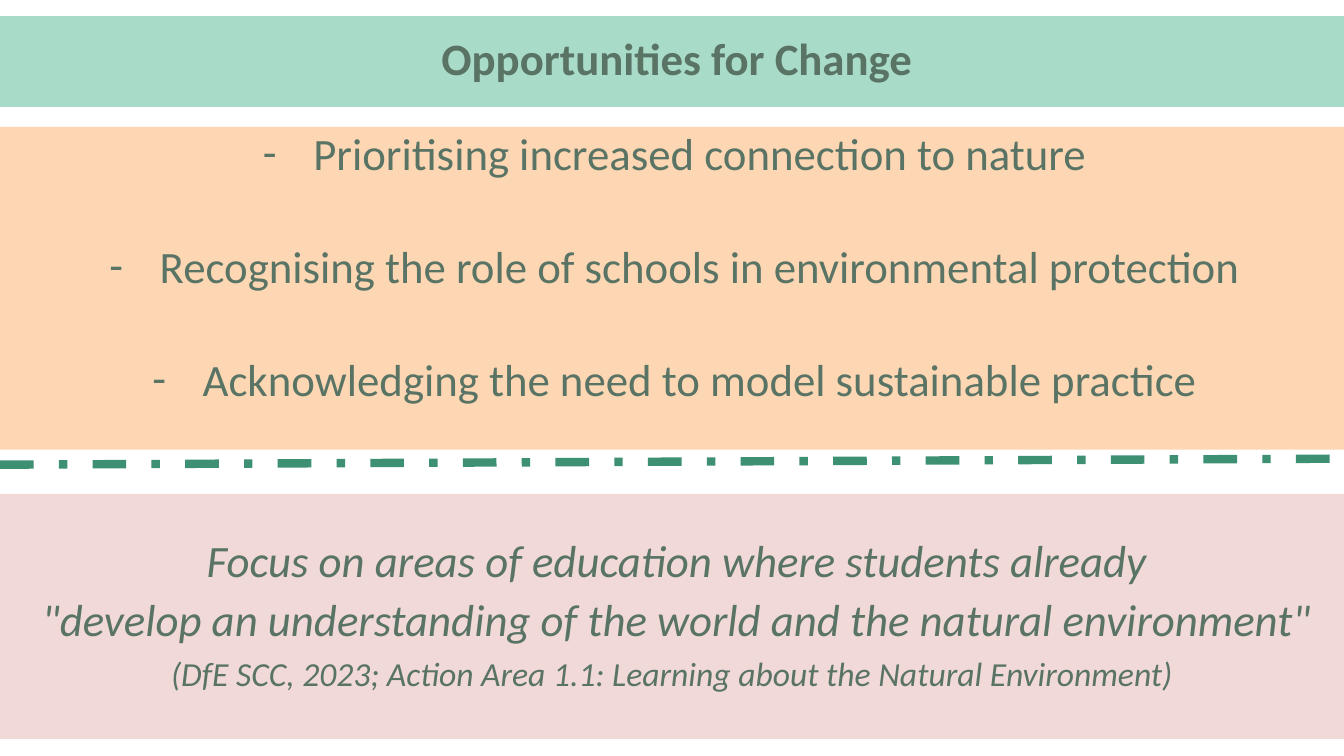
from lxml import etree
from pptx import Presentation
from pptx.dml.color import RGBColor
from pptx.enum.dml import MSO_LINE
from pptx.enum.shapes import MSO_CONNECTOR
from pptx.enum.text import MSO_ANCHOR, MSO_AUTO_SIZE, PP_ALIGN
from pptx.oxml.ns import qn
from pptx.util import Inches, Pt

DASH_DOT = MSO_LINE.DASH_DOT
STRAIGHT = MSO_CONNECTOR.STRAIGHT
TOP, MIDDLE = MSO_ANCHOR.TOP, MSO_ANCHOR.MIDDLE
NO_FIT = MSO_AUTO_SIZE.NONE
CENTER = PP_ALIGN.CENTER

COLORS = {
    "text": "597365",
    "mint": "A9DBC9",
    "peach": "FDD7B3",
    "pink": "F0D9D7",
    "line": "3D9072",
}
WIDE = 13.33


def color(name):
    return RGBColor.from_string(COLORS[name])


def fill_band(band, top, height, fill, anchor, lines, after):
    """Place a full-width placeholder, colour it and write its lines."""
    band.left, band.top = Inches(0), Inches(top)
    band.width, band.height = Inches(WIDE), Inches(height)
    band.fill.solid()
    band.fill.fore_color.rgb = color(fill)
    frame = band.text_frame
    frame.text = "\n".join(lines)
    frame.word_wrap = True
    frame.auto_size = NO_FIT
    frame.vertical_anchor = anchor
    for para in frame.paragraphs:
        para.alignment = CENTER
        para.line_spacing = 0.9
        para.space_before = Pt(0)
        para.space_after = Pt(after)
        for run in para.runs:
            run.font.name = "Calibri"
            run.font.size = Pt(32)
            run.font.color.rgb = color("text")
    return frame


prs = Presentation()
prs.slide_width, prs.slide_height = Inches(WIDE), Inches(7.5)
slide = prs.slides.add_slide(prs.slide_layouts.get_by_name("Two Content"))
title, points, quote = slide.placeholders

# Heading
head = fill_band(title, 0.16, 0.9, "mint", MIDDLE,
                 ["Opportunities for Change"], 8)
head.margin_left = Inches(0.2)
head.paragraphs[0].runs[0].font.bold = True

# Dashed list
items = [
    "Prioritising increased connection to nature",
    "Recognising the role of schools in environmental protection",
    "Acknowledging the need to model sustainable practice",
]
body = fill_band(points, 1.26, 3.2, "peach", TOP, items, 46)
for para in body.paragraphs:
    props = para._p.get_or_add_pPr()
    props.set("marL", str(Inches(0.56)))
    props.set("indent", str(Inches(-0.5)))
    etree.SubElement(props, qn("a:buFont")).set("typeface", "Calibri")
    etree.SubElement(props, qn("a:buChar")).set("char", "-")

# Quotation with its source
words = [
    "Focus on areas of education where students already",
    '"develop an understanding of the world and the natural environment"',
    "(DfE SCC, 2023; Action Area 1.1: Learning about the Natural Environment)",
]
cite = fill_band(quote, 4.9, 2.43, "pink", MIDDLE, words, 8)
for para, inset, size in zip(cite.paragraphs, (0.1, 0.1, 0), (32, 32, 24)):
    props = para._p.get_or_add_pPr()
    props.set("marL", str(Inches(inset)))
    props.set("indent", "0")
    etree.SubElement(props, qn("a:buNone"))
    font = para.runs[0].font
    font.size = Pt(size)
    font.italic = True

# Divider
rule = slide.shapes.add_connector(
    STRAIGHT, Inches(0), Inches(4.61), Inches(WIDE), Inches(4.55))
rule.line.color.rgb = color("line")
rule.line.width = Pt(6)
rule.line.dash_style = DASH_DOT
etree.SubElement(rule._element.spPr, qn("a:effectLst"))

prs.save("out.pptx")
